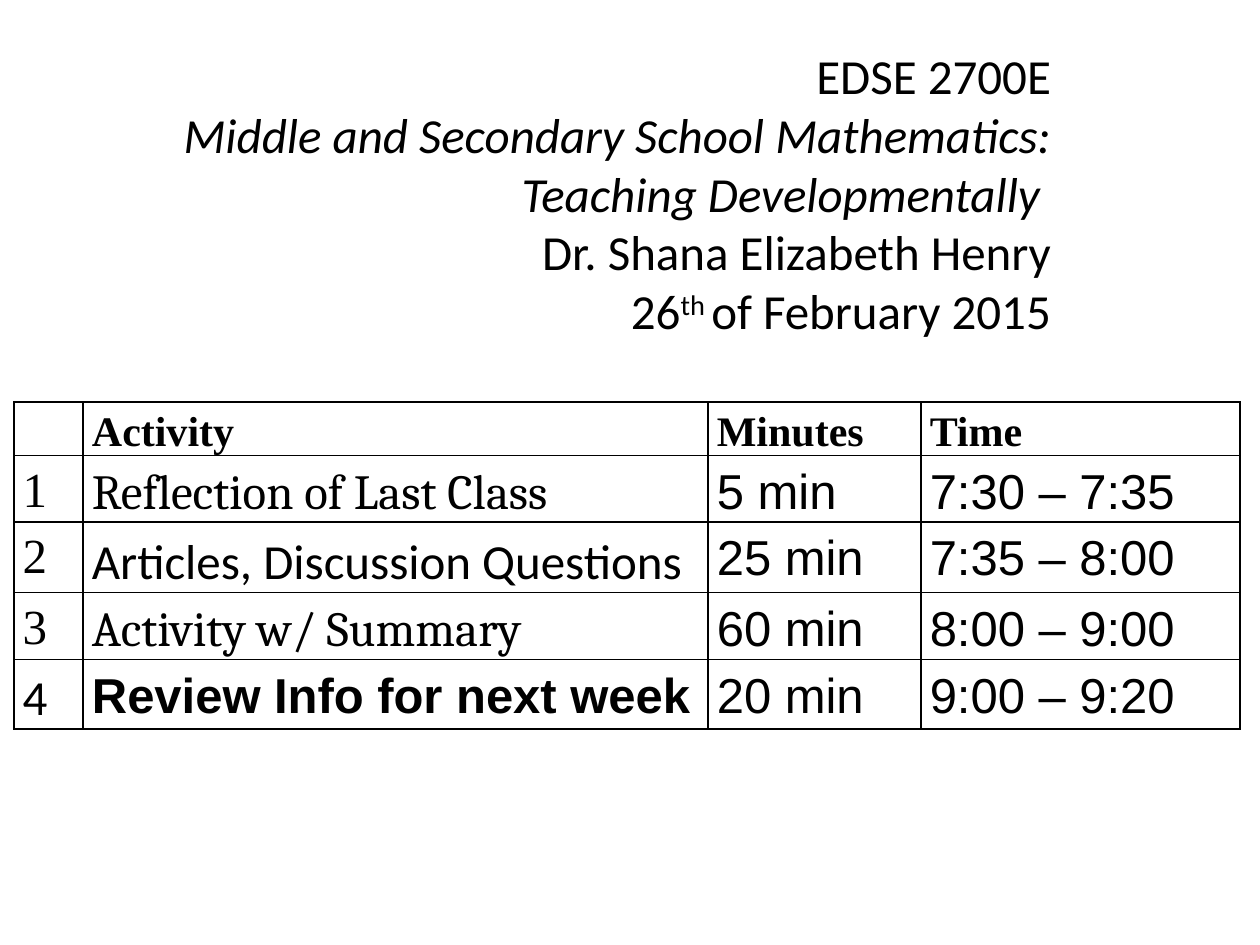
"""Builds the class agenda slide: a course heading above a timed activity table."""
from dataclasses import dataclass
from typing import Any

from lxml.etree import SubElement
from pptx import Presentation
from pptx.dml.color import RGBColor
from pptx.enum.text import MSO_ANCHOR as Anchor, MSO_AUTO_SIZE as AutoSize, PP_ALIGN as Align
from pptx.oxml.ns import qn
from pptx.util import Inches, Pt

COLORS = {"text": "000000", "border": "000000"}
SERIF, SANS, BODY, READING = "Times New Roman", "Arial", "Calibri", "Cambria"

HEADING = [
    [("EDSE 2700E", {})],
    [("Middle and Secondary School Mathematics: Teaching Developmentally ", {"italic": True})],
    [("Dr. Shana Elizabeth Henry", {})],
    [("26", {}), ("th ", {"raised": True}), ("of February 2015", {})],
]
HEADERS = ["", "Activity", "Minutes", "Time"]
ACTIVITIES = [
    ("Reflection of Last Class", READING, "5 min", "7:30 – 7:35"),
    ("Articles, Discussion Questions", BODY, "25 min", "7:35 – 8:00"),
    ("Activity w/ Summary", READING, "60 min", "8:00 – 9:00"),
    ("Review Info for next week", SANS, "20 min", "9:00 – 9:20"),
]
COLUMN_WIDTHS = [0.55, 4.96, 1.69, 2.53]
ROW_HEIGHTS = [0.42, 0.53, 0.56, 0.53, 0.55]


@dataclass
class AgendaSlide:
    """Holds the slide and its style, and adds each kind of element."""
    slide: Any
    size: int = 28
    header_size: int = 24

    def style(self, span, font, size, bold=False, italic=False, raised=False):
        """Format one run."""
        span.font.name = font
        span.font.size = Pt(size)
        span.font.bold = bold
        span.font.italic = italic
        span.font.color.rgb = RGBColor.from_string(COLORS["text"])
        if raised:
            span.font._element.set("baseline", "30000")

    def heading(self, lines, left, top, width, height):
        """Fill and place the title."""
        box = self.slide.shapes.title
        box.left, box.top, box.width, box.height = map(Inches, (left, top, width, height))
        frame = box.text_frame
        frame.word_wrap = True
        frame.auto_size = AutoSize.NONE
        frame.vertical_anchor = Anchor.TOP
        for index, line in enumerate(lines):
            para = frame.add_paragraph() if index else frame.paragraphs[0]
            para.alignment = Align.RIGHT
            for text, options in line:
                span = para.add_run()
                span.text = text
                self.style(span, BODY, self.size, **options)

    def border(self, cell):
        """Draw a one-point line on every side of a cell."""
        properties = cell._tc.get_or_add_tcPr()
        for index, side in enumerate(("lnL", "lnR", "lnT", "lnB")):
            line = SubElement(properties, qn(f"a:{side}"), w=str(Pt(1)))
            fill = SubElement(line, qn("a:solidFill"))
            SubElement(fill, qn("a:srgbClr"), val=COLORS["border"])
            properties.insert(index, line)

    def cell(self, cell, text, font, size, bold=False, inset=0, after=0):
        """Fill and format one table cell."""
        cell.margin_left = cell.margin_right = Inches(0.07)
        cell.margin_top, cell.margin_bottom = Inches(inset), 0
        cell.fill.background()
        self.border(cell)
        cell.text_frame.text = text
        para = cell.text_frame.paragraphs[0]
        para.line_spacing = 1.15
        para.space_after = Pt(after)
        para.font.size = Pt(size)
        for span in para.runs:
            self.style(span, font, size, bold)

    def agenda(self, left, top):
        """Add the activity table."""
        table = self.slide.shapes.add_table(
            len(ROW_HEIGHTS), len(COLUMN_WIDTHS), Inches(left), Inches(top),
            Inches(sum(COLUMN_WIDTHS)), Inches(sum(ROW_HEIGHTS))).table
        table.first_row = table.horz_banding = False
        for column, width in zip(table.columns, COLUMN_WIDTHS):
            column.width = Inches(width)
        for row, height in zip(table.rows, ROW_HEIGHTS):
            row.height = Inches(height)
        for column, text in enumerate(HEADERS):
            self.cell(table.cell(0, column), text, SERIF, self.header_size, bold=True)
        for row, (activity, font, minutes, time) in enumerate(ACTIVITIES, start=1):
            last = row == len(ACTIVITIES)
            self.cell(table.cell(row, 0), str(row), BODY if last else SERIF, self.size)
            self.cell(table.cell(row, 1), activity, font, self.size, bold=last, inset=0.01)
            for column, text in enumerate((minutes, time), start=2):
                self.cell(table.cell(row, column), text, SANS, self.size, inset=0.01, after=10)


def main():
    """Build and save the deck."""
    deck = Presentation()
    deck.slide_width, deck.slide_height = Inches(10), Inches(7.5)
    page = AgendaSlide(deck.slides.add_slide(deck.slide_layouts[5]))
    page.heading(HEADING, 0.5, 0.31, 7.94, 3.06)
    page.agenda(0.11, 3.19)
    deck.save("out.pptx")


if __name__ == "__main__":
    main()
